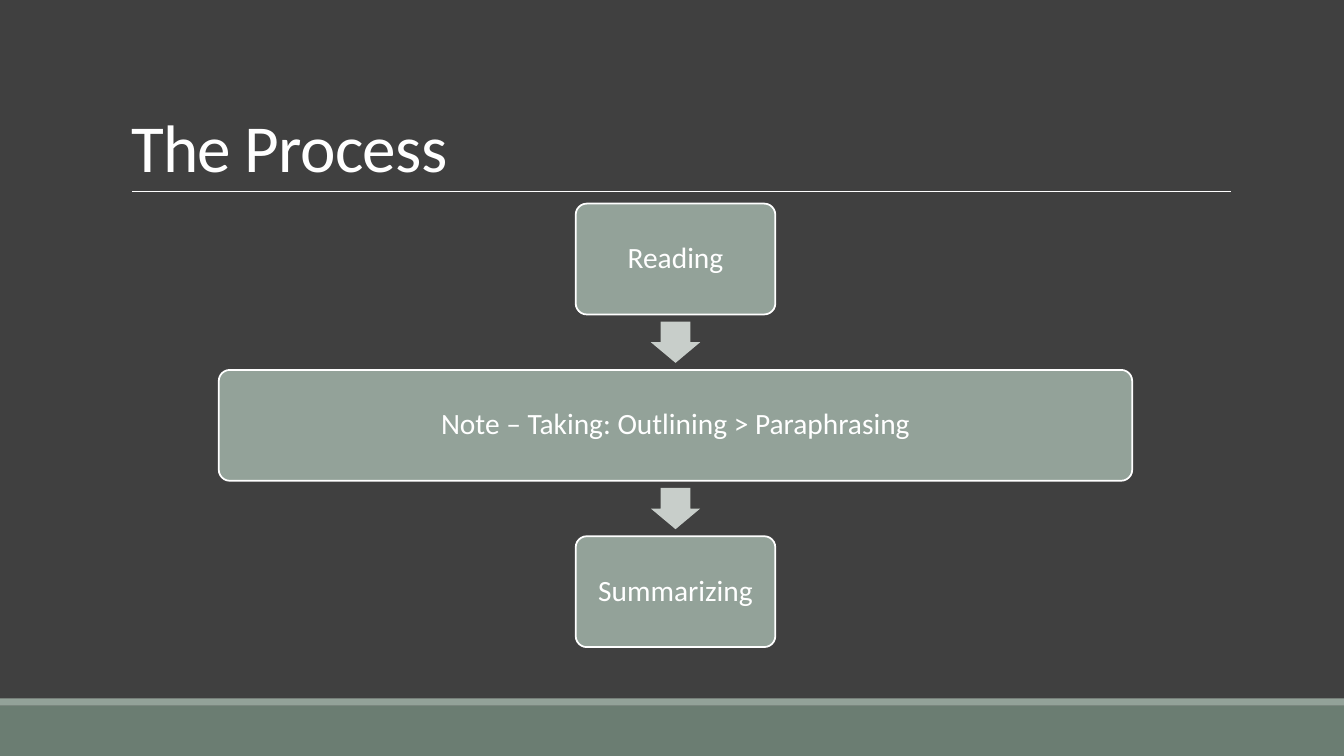
from pptx import Presentation
from pptx.dml.color import RGBColor
from pptx.enum.shapes import MSO_CONNECTOR, MSO_SHAPE
from pptx.enum.text import MSO_ANCHOR, PP_ALIGN
from pptx.oxml.ns import qn
from pptx.util import Inches, Pt
from lxml.etree import SubElement

COLORS = {
    "back": "404040",
    "band": "6B7D72",
    "sage": "93A299",
    "arrow": "C8CECA",
    "white": "FFFFFF",
}
STEPS = [
    ("Reading", 1.98),
    ("Note – Taking: Outlining > Paraphrasing", 9.06),
    ("Summarizing", 1.98),
]
CENTER = 6.7
TOP = 2.02
PITCH = 1.65
HEIGHT = 1.1


def color(name):
    return RGBColor.from_string(COLORS[name])


def add_shape(slide, kind, left, top, width, height, fill):
    shape = slide.shapes.add_shape(
        kind, Inches(left), Inches(top), Inches(width), Inches(height))
    shape.shadow.inherit = False
    shape.fill.solid()
    shape.fill.fore_color.rgb = color(fill)
    shape.line.fill.background()
    return shape


def style_text(para, size, spacing):
    para.line_spacing = spacing
    for run in para.runs:
        run.font.name = "Calibri"
        run.font.size = Pt(size)
        run.font.color.rgb = color("white")


def add_rule(slide, left, right, top):
    rule = slide.shapes.add_connector(
        MSO_CONNECTOR.STRAIGHT,
        Inches(left), Inches(top), Inches(right), Inches(top))
    rule.line.color.rgb = color("white")
    rule.line.width = Pt(0.5)
    SubElement(rule._element.spPr, qn("a:effectLst"))


def set_title(slide, text):
    title = slide.shapes.title
    title.left, title.top = Inches(1.2), Inches(0.31)
    title.width, title.height = Inches(11), Inches(1.59)
    frame = title.text_frame
    frame.text = text
    frame.word_wrap = True
    frame.vertical_anchor = MSO_ANCHOR.BOTTOM
    para = frame.paragraphs[0]
    para.alignment = PP_ALIGN.LEFT
    style_text(para, 48, 0.85)
    para.runs[0]._r.get_or_add_rPr().set("spc", "-50")


def add_step(slide, text, width, top):
    box = add_shape(slide, MSO_SHAPE.ROUNDED_RECTANGLE,
                    CENTER - width / 2, top, width, HEIGHT, "sage")
    box.adjustments[0] = 0.1
    box.line.color.rgb = color("white")
    box.line.width = Pt(1.25)
    frame = box.text_frame
    frame.text = text
    frame.word_wrap = True
    frame.vertical_anchor = MSO_ANCHOR.MIDDLE
    para = frame.paragraphs[0]
    para.alignment = PP_ALIGN.CENTER
    style_text(para, 21, 0.9)


def add_arrow(slide, middle):
    """Add a downward arrow centred at the given height."""
    width, height = 0.41, 0.49
    arrow = add_shape(slide, MSO_SHAPE.RIGHT_ARROW, CENTER - width / 2,
                      middle - height / 2, width, height, "arrow")
    arrow.rotation = 90
    arrow.adjustments[0] = 0.6
    arrow.adjustments[1] = 0.5


def main():
    deck = Presentation()
    deck.slide_width, deck.slide_height = Inches(13.33), Inches(7.5)
    slide = deck.slides.add_slide(deck.slide_layouts[5])
    slide.background.fill.solid()
    slide.background.fill.fore_color.rgb = color("back")

    add_shape(slide, MSO_SHAPE.RECTANGLE, 0, 7, 13.33, 0.5, "band")
    add_shape(slide, MSO_SHAPE.RECTANGLE, 0, 6.93, 13.33, 0.07, "sage")
    add_rule(slide, 1.31, 12.21, 1.9)
    set_title(slide, "The Process")

    for i, (text, width) in enumerate(STEPS):
        top = TOP + i * PITCH
        if i:
            add_arrow(slide, top - (PITCH - HEIGHT) / 2)
        add_step(slide, text, width, top)

    deck.save("out.pptx")


if __name__ == "__main__":
    main()
